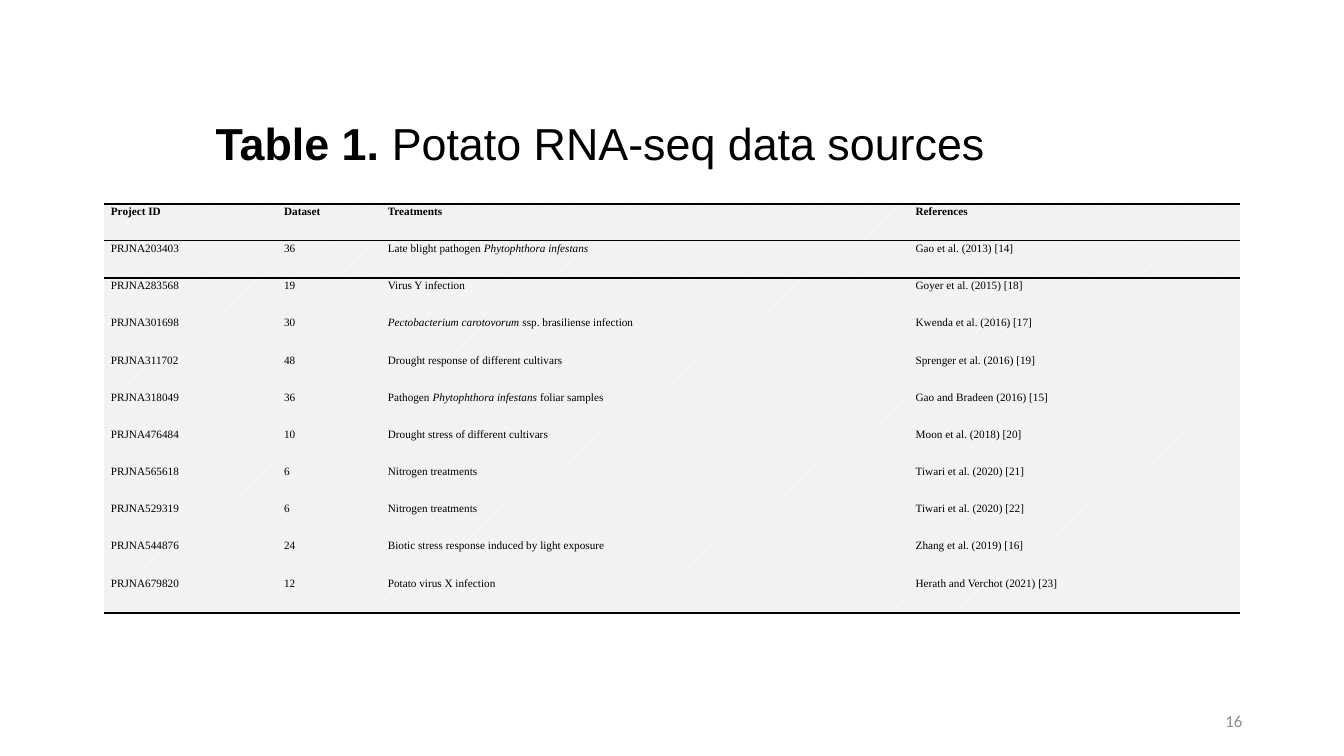
from pptx import Presentation
from pptx.util import Inches as In, Pt
from pptx.dml.color import RGBColor as RGB
from pptx.enum.dml import MSO_PATTERN as Pat
from pptx.enum.text import MSO_ANCHOR as Anchor, PP_ALIGN as Align
from pptx.oxml import parse_xml

HUE = {"ink": "000000", "gray": "8C8C8C", "tint": "F2F2F2", "dots": "FFFFFF"}
NS = "http://schemas.openxmlformats.org/drawingml/2006/main"
PLAIN = "{2D5ABB26-0587-4C30-8999-92F81FD0307C}"  # no style, no grid

WIDTHS = (1.72, 1.03, 5.24, 3.29)
HEAD = ("Project ID", "Dataset", "Treatments", "References")
# Asterisks enclose species names, set in italics
ROWS = (
    ("PRJNA203403", "36", "Late blight pathogen *Phytophthora infestans*", "Gao et al. (2013) [14]"),
    ("PRJNA283568", "19", "Virus Y infection", "Goyer et al. (2015) [18]"),
    ("PRJNA301698", "30", "*Pectobacterium carotovorum* ssp. brasiliense infection", "Kwenda et al. (2016) [17]"),
    ("PRJNA311702", "48", "Drought response of different cultivars", "Sprenger et al. (2016) [19]"),
    ("PRJNA318049", "36", "Pathogen *Phytophthora infestans* foliar samples", "Gao and Bradeen (2016) [15]"),
    ("PRJNA476484", "10", "Drought stress of different cultivars", "Moon et al. (2018) [20]"),
    ("PRJNA565618", "6", "Nitrogen treatments", "Tiwari et al. (2020) [21]"),
    ("PRJNA529319", "6", "Nitrogen treatments", "Tiwari et al. (2020) [22]"),
    ("PRJNA544876", "24", "Biotic stress response induced by light exposure", "Zhang et al. (2019) [16]"),
    ("PRJNA679820", "12", "Potato virus X infection", "Herath and Verchot (2021) [23]"),
)


def color(name):
    return RGB.from_string(HUE[name])


def style(para, face, size, hue="ink"):
    font = para.font
    font.name, font.size = face, Pt(size)
    font.color.rgb = color(hue)


def text_box(slide, box, anchor):
    frame = slide.shapes.add_textbox(*map(In, box)).text_frame
    frame.word_wrap = True
    frame.vertical_anchor = anchor
    return frame


def title(slide, box):
    frame = text_box(slide, box, Anchor.TOP)
    frame.margin_top = In(0.07)
    para = frame.paragraphs[0]
    style(para, "Arial", 32)
    for text, bold in (("Table 1. ", True), ("Potato RNA-seq data sources", False)):
        run = para.add_run()
        run.text, run.font.bold = text, bold


def number(slide, box):
    para = text_box(slide, box, Anchor.MIDDLE).paragraphs[0]
    para.text, para.alignment = "16", Align.RIGHT
    style(para, "Calibri", 12, "gray")


def border(cell, sides):
    # Border lines come before the fill in the cell's properties
    props = cell._tc.get_or_add_tcPr()
    for i, (side, width) in enumerate(sides.items()):
        props.insert(i, parse_xml(
            f'<a:ln{side} xmlns:a="{NS}" w="{Pt(width)}"><a:solidFill>'
            f'<a:srgbClr val="{HUE["ink"]}"/></a:solidFill></a:ln{side}>'))


def fill_cell(cell, text, bold):
    cell.margin_left = cell.margin_right = In(0.07)
    cell.margin_top = cell.margin_bottom = 0
    fill = cell.fill
    fill.patterned()
    fill.pattern = Pat.PERCENT_5
    fill.fore_color.rgb, fill.back_color.rgb = color("dots"), color("tint")
    para = cell.text_frame.paragraphs[0]
    para.line_spacing = Pt(10)
    style(para, "Times New Roman", 8)
    para.font.bold = bold
    for i, part in enumerate(text.split("*")):
        if part:
            run = para.add_run()
            run.text, run.font.italic = part, i % 2 == 1


def sources(slide, box):
    data = (HEAD, *ROWS)
    last = len(data) - 1
    table = slide.shapes.add_table(len(data), len(HEAD), *map(In, box)).table
    table.first_row = table.horz_banding = False
    table._tbl.tblPr.find(f"{{{NS}}}tableStyleId").text = PLAIN
    for col, share in zip(table.columns, WIDTHS):
        col.width = In(box[2] * share / sum(WIDTHS))
    rules = {0: {"T": 1.5, "B": 1}, 1: {"T": 1}, last: {"B": 1.5}}
    for r, line in enumerate(data):
        table.rows[r].height = In(box[3] / len(data))
        for c, text in enumerate(line):
            cell = table.cell(r, c)
            fill_cell(cell, text, r == 0)
            border(cell, rules.get(r, {}))


def main():
    deck = Presentation()
    deck.slide_width, deck.slide_height = In(13.33), In(7.5)
    slide = deck.slides.add_slide(deck.slide_layouts[6])
    number(slide, (9.42, 6.95, 3, 0.4))
    sources(slide, (1.03, 2.02, 11.27, 4.06))
    title(slide, (2.04, 1.08, 8.03, 0.94))
    deck.save("out.pptx")


if __name__ == "__main__":
    main()
